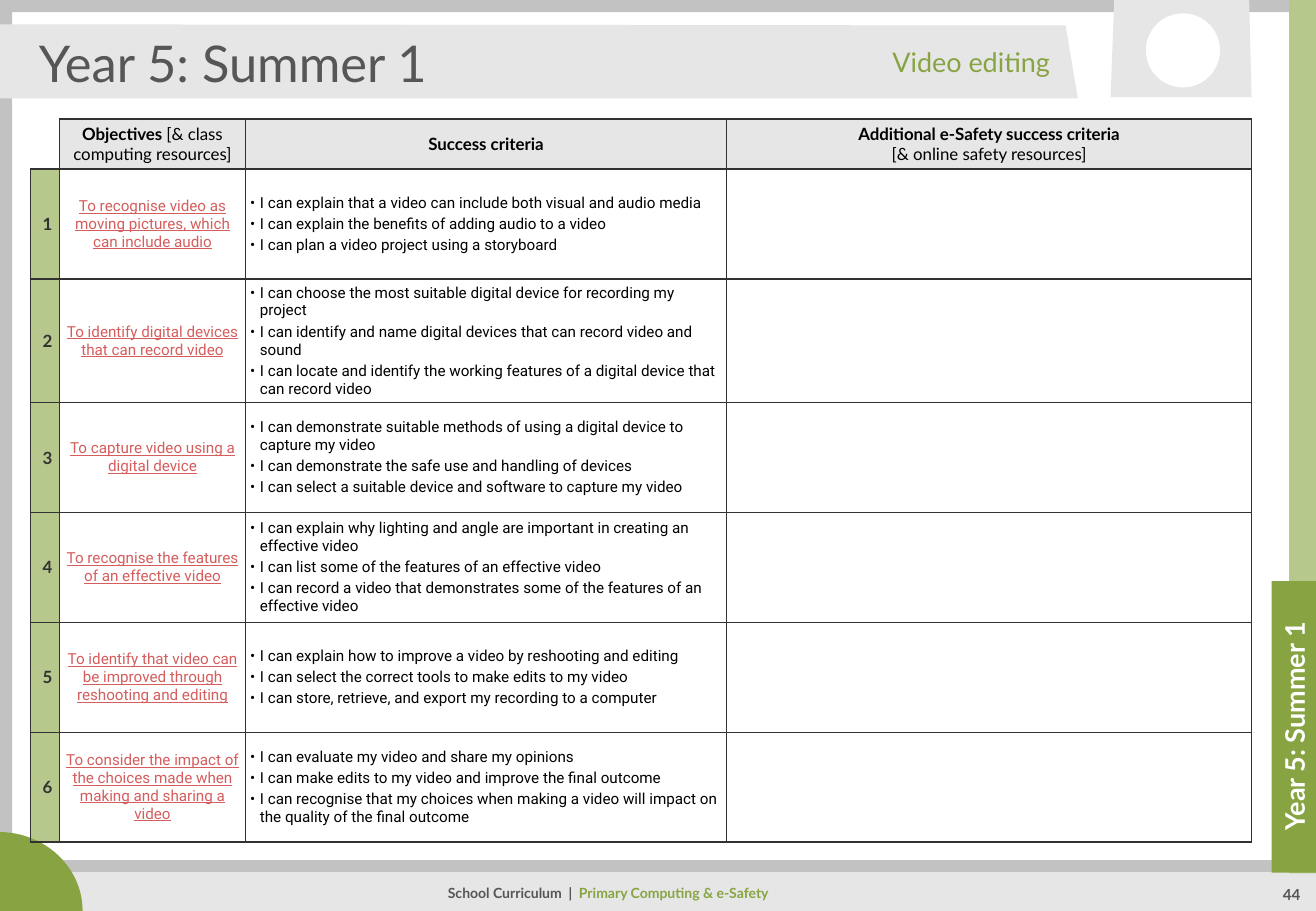
from dataclasses import dataclass

from lxml import etree
from pptx import Presentation
from pptx.dml.color import RGBColor
from pptx.enum.shapes import MSO_CONNECTOR, MSO_SHAPE
from pptx.enum.text import MSO_ANCHOR, MSO_AUTO_SIZE, PP_ALIGN
from pptx.oxml.ns import qn
from pptx.util import Inches, Pt

RECTANGLE, OVAL, ARC = MSO_SHAPE.RECTANGLE, MSO_SHAPE.OVAL, MSO_SHAPE.ARC
STRAIGHT = MSO_CONNECTOR.STRAIGHT
LEFT, CENTER, RIGHT = PP_ALIGN.LEFT, PP_ALIGN.CENTER, PP_ALIGN.RIGHT
TOP, MIDDLE = MSO_ANCHOR.TOP, MSO_ANCHOR.MIDDLE
FIXED_SIZE = MSO_AUTO_SIZE.NONE

GRID_STEP = Inches(0.1)
GRID_COLUMNS, GRID_ROWS = 108.3, 75
TERM = "Year 5: Summer 1"


@dataclass(frozen=True)
class Theme:
    heading: str = "Lato"
    body: str = "Roboto"
    green: str = "88A442"
    frame: str = "C2C2C2"
    panel: str = "E6E6E6"
    grey: str = "565656"
    rule: str = "323232"
    link: str = "D55D5D"
    black: str = "000000"
    white: str = "FFFFFF"
    tint: int = 60
    title_size: float = 30
    topic_size: float = 16
    header_size: float = 10
    body_size: float = 9
    footer_size: float = 8.3


THEME = Theme()

HEADERS = [
    ("Objectives ", "[& class computing resources]", False),
    ("Success criteria", "", False),
    ("Additional e-Safety success criteria", "[& online safety resources]", True),
]
LESSONS = [
    ("To recognise video as moving pictures, which can include audio",
     ["I can explain that a video can include both visual and audio media",
      "I can explain the benefits of adding audio to a video",
      "I can plan a video project using a storyboard"]),
    ("To identify digital devices that can record video",
     ["I can choose the most suitable digital device for recording my project",
      "I can identify and name digital devices that can record video and sound",
      "I can locate and identify the working features of a digital device that can record video"]),
    ("To capture video using a digital device",
     ["I can demonstrate suitable methods of using a digital device to capture my video",
      "I can demonstrate the safe use and handling of devices",
      "I can select a suitable device and software to capture my video"]),
    ("To recognise the features of an effective video",
     ["I can explain why lighting and angle are important in creating an effective video",
      "I can list some of the features of an effective video",
      "I can record a video that demonstrates some of the features of an effective video"]),
    ("To identify that video can be improved through reshooting and editing",
     ["I can explain how to improve a video by reshooting and editing",
      "I can select the correct tools to make edits to my video",
      "I can store, retrieve, and export my recording to a computer"]),
    ("To consider the impact of the choices made when making and sharing a video",
     ["I can evaluate my video and share my opinions",
      "I can make edits to my video and improve the final outcome",
      "I can recognise that my choices when making a video will impact on the quality of the final outcome"]),
]


def grid(*steps):
    return [round(step * GRID_STEP) for step in steps]


def paint(owner, properties, color, opacity=100):
    owner.fill.solid()
    owner.fill.fore_color.rgb = RGBColor.from_string(color)
    if opacity < 100:
        tone = properties.find(f"{qn('a:solidFill')}/{qn('a:srgbClr')}")
        etree.SubElement(tone, qn("a:alpha"), val=str(opacity * 1000))


def finish(shape, color, opacity=100):
    shape.shadow.inherit = False
    shape.line.fill.background()
    paint(shape, shape.element.spPr, color, opacity)


def add_block(slide, kind, box, color, opacity=100):
    finish(slide.shapes.add_shape(kind, *grid(*box)), color, opacity)


def add_outline(slide, color, *contours):
    builder = slide.shapes.build_freeform(*grid(*contours[0][0]))
    for number, (start, *corners) in enumerate(contours):
        if number:
            builder.move_to(*grid(*start))
        builder.add_line_segments([grid(*corner) for corner in corners], close=True)
    finish(builder.convert_to_shape(), color)


def add_rule(slide, start, end, color, weight):
    rule = slide.shapes.add_connector(STRAIGHT, *grid(*start, *end))
    rule.line.color.rgb = RGBColor.from_string(color)
    rule.line.width = Pt(weight)
    etree.SubElement(rule.element.spPr, qn("a:effectLst"))


def add_run(paragraph, text, size, color, font=THEME.heading, bold=False, underline=False):
    run = paragraph.add_run()
    run.text = text
    run.font.name, run.font.size = font, Pt(size)
    run.font.bold, run.font.underline = bold, underline
    run.font.color.rgb = RGBColor.from_string(color)


def write_label(label, runs, size, align, anchor=MIDDLE, bold=False):
    frame = label.text_frame
    frame.word_wrap, frame.auto_size, frame.vertical_anchor = True, FIXED_SIZE, anchor
    paragraph = frame.paragraphs[0]
    paragraph.alignment = align
    for text, color in runs:
        add_run(paragraph, text, size, color, bold=bold)
    return paragraph


def add_label(slide, box, runs, size, align, anchor=MIDDLE, bold=False, rotation=0):
    label = slide.shapes.add_textbox(*grid(*box))
    label.rotation = rotation
    return write_label(label, runs, size, align, anchor, bold)


def place_title(slide, box):
    title = slide.shapes.title
    title.left, title.top, title.width, title.height = grid(*box)
    write_label(title, [(TERM, THEME.grey)], THEME.title_size, LEFT)
    slide.shapes.element.append(title.element)


def add_borders(cell, visible="LRTB"):
    properties = cell._tc.get_or_add_tcPr()
    for place, side in enumerate("LRTB"):
        border = etree.Element(qn(f"a:ln{side}"), w=str(Pt(1)))
        if side in visible:
            solid = etree.SubElement(border, qn("a:solidFill"))
            etree.SubElement(solid, qn("a:srgbClr"), val=THEME.rule)
        else:
            etree.SubElement(border, qn("a:noFill"))
        properties.insert(place, border)


def format_cell(cell, color, opacity=100, tight=True):
    paint(cell, cell._tc.get_or_add_tcPr(), color, opacity)
    add_borders(cell)
    cell.vertical_anchor = MIDDLE
    if tight:
        inset = Inches(0.04)
        cell.margin_left = cell.margin_right = cell.margin_top = cell.margin_bottom = inset
    paragraph = cell.text_frame.paragraphs[0]
    paragraph.alignment = CENTER
    return paragraph


def write_criteria(cell, criteria):
    format_cell(cell, THEME.white)
    frame = cell.text_frame
    for number, criterion in enumerate(criteria):
        paragraph = frame.add_paragraph() if number else frame.paragraphs[0]
        paragraph.alignment, paragraph.space_after = LEFT, Pt(2)
        properties = paragraph._p.get_or_add_pPr()
        properties.set("marL", str(Inches(0.08)))
        properties.set("indent", str(-Inches(0.08)))
        etree.SubElement(properties, qn("a:buFont"), typeface=THEME.body)
        etree.SubElement(properties, qn("a:buChar"), char="•")
        add_run(paragraph, criterion, THEME.body_size, THEME.black, THEME.body)


def add_lesson_table(slide):
    widths = grid(2.3, 15.3, 39.6, 43.2)
    heights = grid(2.4, *[9.05] * len(LESSONS))
    table = slide.shapes.add_table(len(heights), len(widths), *grid(2.5, 9.8),
                                   sum(widths), sum(heights)).table
    table.first_row = table.horz_banding = False
    for column, width in zip(table.columns, widths):
        column.width = width
    for row, height in zip(table.rows, heights):
        row.height = height
    table.cell(0, 0).fill.background()
    add_borders(table.cell(0, 0), "RB")
    for column, (heading, resources, on_new_line) in enumerate(HEADERS, 1):
        paragraph = format_cell(table.cell(0, column), THEME.panel)
        add_run(paragraph, heading, THEME.header_size, THEME.black, bold=True)
        if on_new_line:
            paragraph.add_line_break()
        if resources:
            add_run(paragraph, resources, THEME.header_size, THEME.black)
    for row, (objective, criteria) in enumerate(LESSONS, 1):
        number = format_cell(table.cell(row, 0), THEME.green, THEME.tint, tight=False)
        add_run(number, str(row), THEME.header_size, THEME.rule, bold=True)
        aim = format_cell(table.cell(row, 1), THEME.white)
        aim.space_after = Pt(2)
        add_run(aim, objective, THEME.body_size, THEME.link, THEME.body, underline=True)
        write_criteria(table.cell(row, 2), criteria)
        format_cell(table.cell(row, 3), THEME.white, tight=False)


def main():
    deck = Presentation()
    deck.slide_width, deck.slide_height = grid(GRID_COLUMNS, GRID_ROWS)
    slide = deck.slides.add_slide(deck.slide_layouts[5])

    add_outline(slide, THEME.frame,
                [(0, 0), (108.5, 0), (108.5, 75), (0, 75)],
                [(1, 1), (1, 74.1), (107.3, 74.1), (107.3, 1)])
    add_block(slide, RECTANGLE, (3.2, 71.8, 105.3, 3.3), THEME.panel)
    add_rule(slide, (0.5, 71.3), (GRID_COLUMNS, 71.3), THEME.frame, 7)
    add_block(slide, ARC, (-7, 68.5, 13.8, 13), THEME.green)
    footer = add_label(slide, (20.5, 72.1, 59.1, 3),
                       [("School Curriculum  |  ", THEME.grey),
                        ("Primary Computing & e-Safety", THEME.green)],
                       THEME.footer_size, CENTER, bold=True)
    footer.line_spacing = 0.9
    add_outline(slide, THEME.panel, [(-0.2, 2), (-0.1, 8.1), (88.7, 8.1), (87.7, 2.1)])
    for color, opacity in ((THEME.white, 100), (THEME.green, THEME.tint)):
        add_block(slide, RECTANGLE, (106.1, -0.1, 2.4, 72), color, opacity)
    add_block(slide, RECTANGLE, (104.65, 47.85, 3.9, 24), THEME.green)
    page = add_label(slide, (103.1, 72.1, 6.4, 2.8), [("44", THEME.grey)],
                     THEME.body_size, CENTER, TOP, bold=True)
    page.line_spacing = 1.2
    add_outline(slide, THEME.panel, [(91.4, 8), (103, 8), (102.8, -0.1), (91.7, -0.2)])
    add_block(slide, OVAL, (94.3, 1.1, 6.1, 6.1), THEME.white)

    place_title(slide, (2.2, 2.6, 84.2, 5))
    add_label(slide, (94.6, 58.1, 23.8, 3.4), [(TERM, THEME.white)],
              THEME.topic_size, CENTER, bold=True, rotation=270)
    add_label(slide, (37.3, 2.6, 50.1, 5), [("Video editing", THEME.green)],
              THEME.topic_size, RIGHT)
    add_lesson_table(slide)
    deck.save("out.pptx")


if __name__ == "__main__":
    main()
